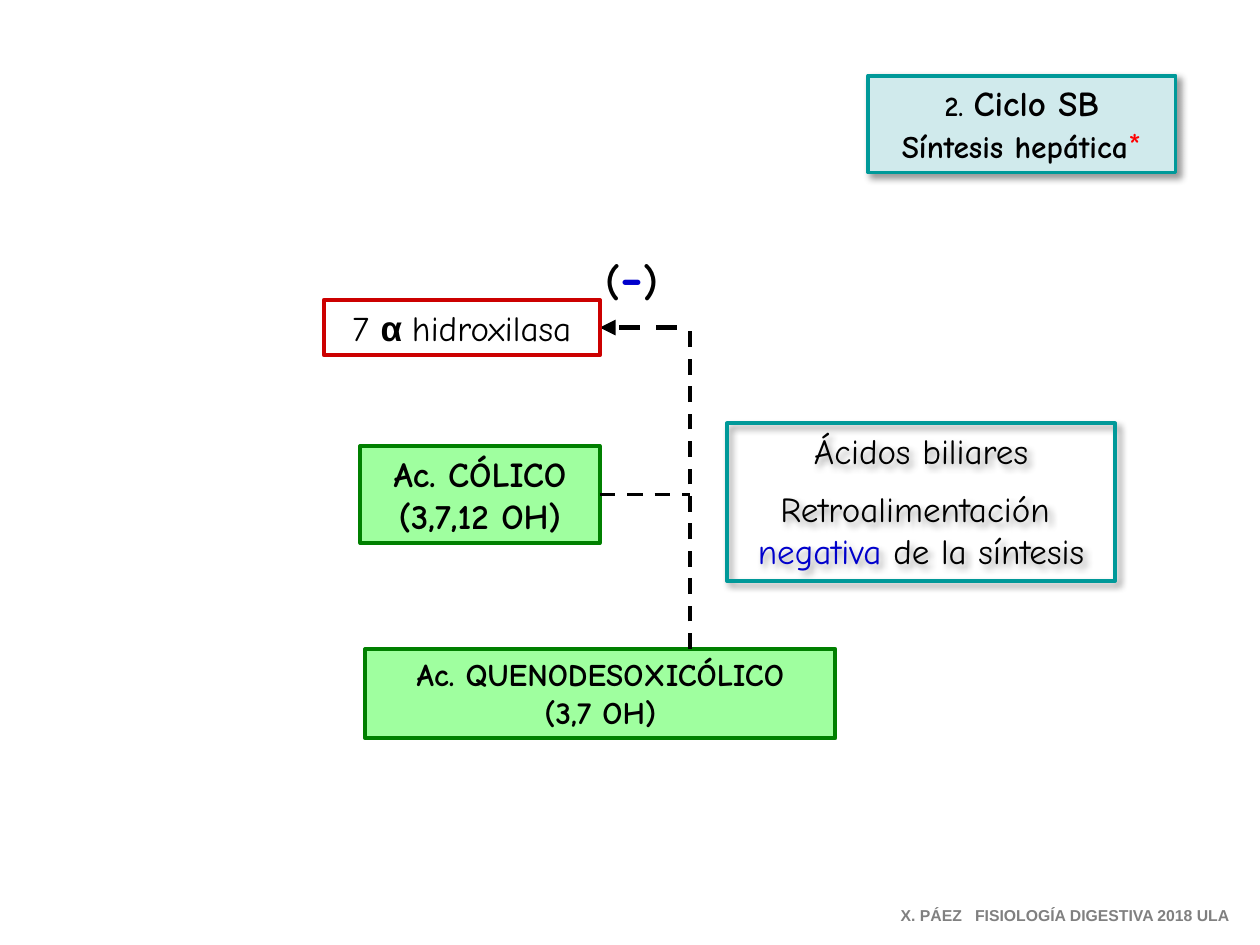
"""Build the slide on negative feedback in hepatic bile acid synthesis."""
from dataclasses import dataclass
from typing import Optional

from lxml.etree import SubElement
from pptx import Presentation
from pptx.dml.color import RGBColor
from pptx.enum.dml import MSO_LINE
from pptx.enum.shapes import MSO_CONNECTOR, MSO_SHAPE
from pptx.enum.text import MSO_ANCHOR, MSO_AUTO_SIZE, PP_ALIGN
from pptx.oxml.ns import qn
from pptx.util import Inches, Pt

COLUMNS, ROWS = 100, 75
CELL = Inches(0.1)
HAND, SANS = "Comic Neue", "Arial"
BLACK, BLUE, RED, GREY = "000000", "0000CC", "FF0000", "808080"
GREEN, LIGHT_GREEN = "008000", "9FFF9F"
TEAL, LIGHT_TEAL, CRIMSON = "009999", "D0EAEC", "CC0000"


@dataclass(frozen=True)
class Span:
    text: str
    size: float = 20
    bold: bool = False
    color: str = BLACK
    font: str = HAND
    spacing: float = 0


@dataclass(frozen=True)
class Line:
    spans: tuple[Span, ...]
    space_before: float = 0


@dataclass(frozen=True)
class Box:
    column: float
    row: float
    width: float
    height: float
    lines: tuple[Line, ...]
    border: Optional[str] = None
    fill: Optional[str] = None
    shadow: bool = False
    wrap: bool = False
    align: PP_ALIGN = PP_ALIGN.CENTER


@dataclass(frozen=True)
class Link:
    start: tuple[float, float]
    end: tuple[float, float]
    weight: float = 2.25
    arrow: bool = False


def cells(count: float) -> int:
    """Convert grid cells to a length."""
    return round(count * CELL)


def paint(target, color: str) -> None:
    """Give a fill or line format a solid colour."""
    target.solid()
    target.fore_color.rgb = RGBColor.from_string(color)


def write_line(paragraph, line: Line, align: PP_ALIGN) -> None:
    """Write one paragraph and format its runs."""
    paragraph.alignment = align
    paragraph.space_before = Pt(line.space_before)
    for span in line.spans:
        run = paragraph.add_run()
        run.text = span.text
        run.font.name = span.font
        run.font.size = Pt(span.size)
        run.font.bold = span.bold
        run.font.color.rgb = RGBColor.from_string(span.color)
        if span.spacing:
            run._r.get_or_add_rPr().set("spc", str(round(span.spacing * 100)))


def cast_shadow(shape) -> None:
    """Add a soft shadow to the lower right."""
    effects = shape._element.spPr.find(qn("a:effectLst"))
    outer = SubElement(effects, qn("a:outerShdw"), blurRad=str(Pt(4)),
                       dist=str(Pt(3)), dir="2700000", algn="tl", rotWithShape="0")
    tone = SubElement(outer, qn("a:srgbClr"), val=BLACK)
    SubElement(tone, qn("a:alpha"), val="40000")


def draw_box(slide, box: Box):
    """Draw a bordered box, or a plain text box without a border."""
    place = [cells(n) for n in (box.column, box.row, box.width, box.height)]
    if box.border:
        shape = slide.shapes.add_shape(MSO_SHAPE.RECTANGLE, *place)
        shape.shadow.inherit = False
        paint(shape.line.fill, box.border)
        shape.line.width = Pt(2.25)
        if box.fill:
            paint(shape.fill, box.fill)
        else:
            shape.fill.background()
        if box.shadow:
            cast_shadow(shape)
    else:
        shape = slide.shapes.add_textbox(*place)
    frame = shape.text_frame
    frame.word_wrap = box.wrap
    frame.auto_size = MSO_AUTO_SIZE.SHAPE_TO_FIT_TEXT
    frame.vertical_anchor = MSO_ANCHOR.TOP
    for index, line in enumerate(box.lines):
        paragraph = frame.add_paragraph() if index else frame.paragraphs[0]
        write_line(paragraph, line, box.align)
    return shape


def draw_link(slide, link: Link):
    """Draw a dashed connector."""
    connector = slide.shapes.add_connector(
        MSO_CONNECTOR.STRAIGHT, *(cells(n) for n in link.start + link.end))
    paint(connector.line.fill, BLACK)
    connector.line.width = Pt(link.weight)
    connector.line.dash_style = MSO_LINE.DASH
    if link.arrow:
        SubElement(connector.line._get_or_add_ln(), qn("a:tailEnd"), type="triangle")
    SubElement(connector._element.spPr, qn("a:effectLst"))
    return connector


def acid(column: float, row: float, width: float, height: float,
         name: str, hydroxyls: str, size: float) -> Box:
    """Describe a green bile acid box."""
    lines = tuple(Line((Span(text, size, True),)) for text in (name, hydroxyls))
    return Box(column, row, width, height, lines, GREEN, LIGHT_GREEN)


CHOLIC = acid(28.6, 35.4, 19, 7.7, "Ac. CÓLICO", "(3,7,12 OH)", 20)
CHENODEOXYCHOLIC = acid(29, 51.5, 37.3, 7.1, "Ac. QUENODESOXICÓLICO", "(3,7 OH)", 18)
ENZYME = Box(25.7, 23.8, 21.9, 4.4, (
    Line((Span("7 "), Span("α ", bold=True, font=SANS), Span("hidroxilasa"))),
), CRIMSON)
INHIBITION = Box(47.1, 18.6, 7.6, 6.3, (
    Line((Span("(", 24, True), Span("-", 32, True, BLUE), Span(")", 24, True))),
), wrap=True, align=PP_ALIGN.LEFT)
FEEDBACK = Box(57.7, 33.6, 30.8, 12.5, (
    Line((Span("Ácidos biliares"),)),
    Line((Span("Retroalimentación "),), space_before=9),
    Line((Span("negativa", color=BLUE), Span(" de la síntesis"))),
), TEAL, shadow=True)
TITLE = Box(68.9, 6, 24.4, 7.7, (
    Line((Span("2. ", 16, True), Span("Ciclo SB", 20, True))),
    Line((Span("Síntesis hepática", 18, True), Span("*", color=RED))),
), TEAL, LIGHT_TEAL, shadow=True)
CREDIT = Box(70.5, 71.4, 28.5, 2.5, (
    Line((Span("X. PÁEZ", 9, True, GREY, SANS),
          Span(" ", 9, True, GREY, SANS, spacing=5),
          Span("FISIOLOGÍA DIGESTIVA 2018 ULA", 9, True, GREY, SANS))),
), align=PP_ALIGN.LEFT)

TRUNK = 54.75
ENZYME_MIDDLE = ENZYME.row + ENZYME.height / 2
CHOLIC_MIDDLE = CHOLIC.row + CHOLIC.height / 2


def main() -> None:
    """Build and save the slide."""
    deck = Presentation()
    deck.slide_width, deck.slide_height = cells(COLUMNS), cells(ROWS)
    slide = deck.slides.add_slide(deck.slide_layouts[6])

    cholic = draw_box(slide, CHOLIC)
    draw_box(slide, CHENODEOXYCHOLIC)
    draw_link(slide, Link((TRUNK, CHENODEOXYCHOLIC.row), (TRUNK, ENZYME_MIDDLE)))
    branch = draw_link(slide, Link((CHOLIC.column + CHOLIC.width, CHOLIC_MIDDLE),
                                   (TRUNK, CHOLIC_MIDDLE)))
    branch.begin_connect(cholic, 3)
    arrow = draw_link(slide, Link((53.7, ENZYME_MIDDLE),
                                  (ENZYME.column + ENZYME.width, ENZYME_MIDDLE),
                                  weight=3, arrow=True))
    draw_box(slide, INHIBITION)
    arrow.end_connect(draw_box(slide, ENZYME), 3)
    for box in (FEEDBACK, TITLE, CREDIT):
        draw_box(slide, box)
    deck.save("out.pptx")


if __name__ == "__main__":
    main()
